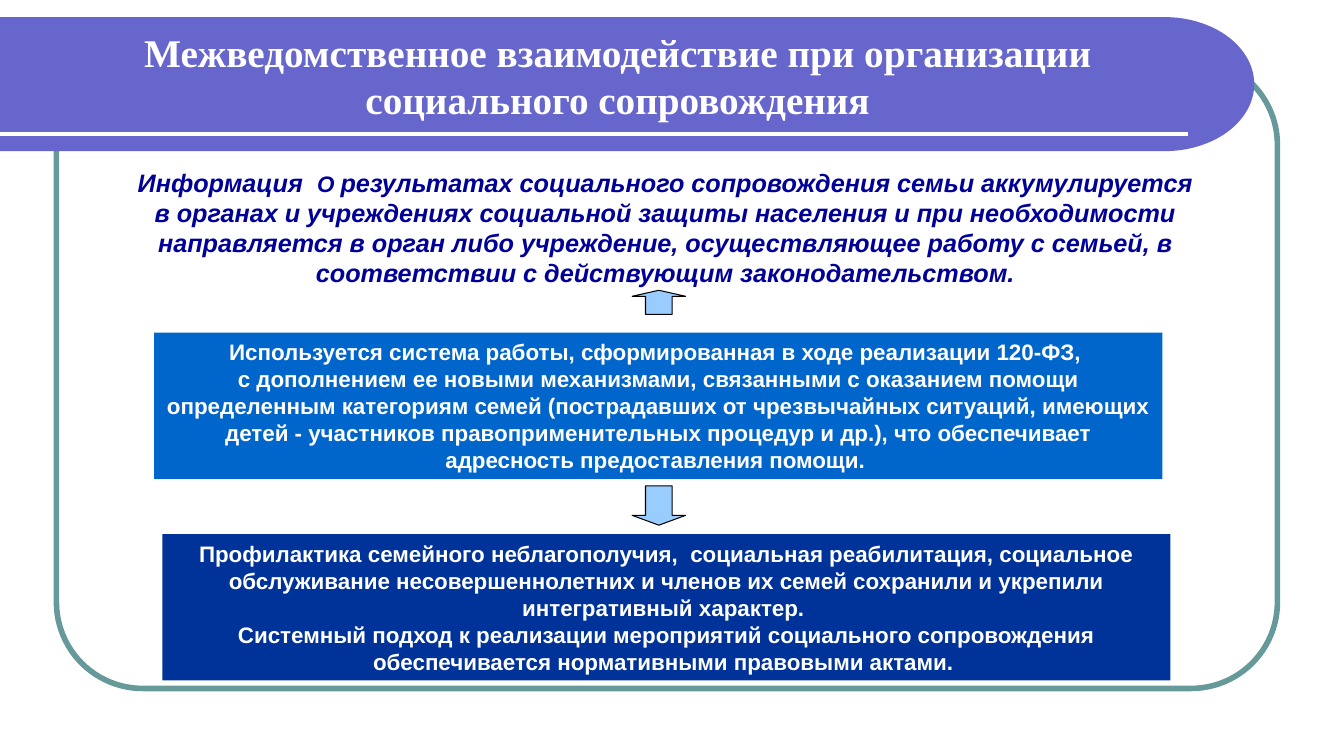
import math

from lxml import etree
from pptx import Presentation
from pptx import util as u
from pptx.dml.color import RGBColor
from pptx.enum import shapes, text

WIDTH, HEIGHT = 13.33, 7.5
BODY = {"name": "Arial", "size": u.Pt(16), "bold": True}
TITLE = {"name": "Times New Roman", "size": u.Pt(28), "bold": True}
LEAD = {**BODY, "size": u.Pt(18), "italic": True}
LEAD_SMALL = {**LEAD, "size": u.Pt(16)}


def inches(*lengths):
    """Turn lengths in inches into slide units."""
    return [u.Inches(length) for length in lengths]


def paint(target, color):
    """Give a fill or a font colour a solid hex colour."""
    if hasattr(target, "solid"):
        target.solid()
        target = target.fore_color
    target.rgb = RGBColor.from_string(color)


def outline(shape, color=None, width=0):
    """Draw the outline of a shape, or remove it when no colour is given."""
    if color is None:
        shape.line.fill.background()
        return
    paint(shape.line.fill, color)
    shape.line.width = u.Pt(width)


def add_preset(page, kind, box, fill=None, line=None, width=0, adjust=()):
    """Place a flat preset shape in the box."""
    shape = page.shapes.add_shape(kind, *inches(*box))
    shape.shadow.inherit = False
    for index, value in enumerate(adjust):
        shape.adjustments[index] = value
    if fill:
        paint(shape.fill, fill)
    else:
        shape.fill.background()
    outline(shape, line, width)
    return shape


def write(shape, paragraphs, color):
    """Write centred paragraphs, each a list of text and format pairs."""
    frame = shape.text_frame
    frame.word_wrap = True
    frame.vertical_anchor = text.MSO_ANCHOR.MIDDLE
    for index, spans in enumerate(paragraphs):
        para = frame.add_paragraph() if index else frame.paragraphs[0]
        para.alignment = text.PP_ALIGN.CENTER
        for words, style in spans:
            span = para.add_run()
            span.text = words
            paint(span.font.color, color)
            for name, value in style.items():
                setattr(span.font, name, value)


def add_text(page, box, paragraphs, color):
    """Place a text box with centred text."""
    write(page.shapes.add_textbox(*inches(*box)), paragraphs, color)


def add_header(page, box, title):
    """Draw the banner with a rounded right end, its rule and the title."""
    left, top, width, height = box
    radius_x, radius_y = width / 14, height / 2
    center_x, center_y = left + width - radius_x, top + radius_y
    angles = [math.radians(degree) for degree in range(-90, 91, 3)]
    curve = [(center_x + radius_x * math.cos(angle),
              center_y + radius_y * math.sin(angle)) for angle in angles]
    builder = page.shapes.build_freeform(*inches(left, top), scale=1.0)
    builder.add_line_segments(
        [inches(*point) for point in curve + [(left, top + height)]], close=True)
    banner = builder.convert_to_shape()
    banner.shadow.inherit = False
    paint(banner.fill, "6666CC")
    outline(banner)

    rule_y = top + height * 0.87
    rule = page.shapes.add_connector(
        shapes.MSO_CONNECTOR.STRAIGHT, *inches(left, rule_y, left + 11.78, rule_y))
    outline(rule, "FFFFFF", 3)
    properties = rule.element.spPr
    etree.SubElement(
        properties, "{http://schemas.openxmlformats.org/drawingml/2006/main}effectLst")
    add_text(page, (left + 0.28, top + 0.08, 11.69, 1), [[(title, TITLE)]], "FFFFFF")


def add_panel(page, box, fill, sentences):
    """Draw a filled rectangle with white bold sentences."""
    panel = add_preset(page, shapes.MSO_SHAPE.RECTANGLE, box, fill)
    write(panel, [[(sentence, BODY)] for sentence in sentences], "FFFFFF")


def add_arrow(page, kind, top, height):
    """Draw a pale block arrow on the common axis."""
    add_preset(page, kind, (6.27, top, 0.53, height), "99CCFF", "000000", 0.75, (0.5, 0.25))


def build_slide(page):
    """Put the frame, banner, lead text, panels and arrows on the page."""
    add_preset(page, shapes.MSO_SHAPE.ROUNDED_RECTANGLE, (0.56, 0.58, 12.11, 6.25),
               line="669999", width=4, adjust=(0.137,))
    add_header(page, (0, 0.17, 12.44, 1.33),
               "Межведомственное взаимодействие при организации социального сопровождения")
    add_text(page, (1.23, 1.6, 10.74, 1.31), [[
        ("Информация  ", LEAD),
        ("О ", LEAD_SMALL),
        ("результатах социального сопровождения семьи аккумулируется в органах и "
         "учреждениях социальной защиты населения и при необходимости направляется "
         "в орган либо учреждение, осуществляющее работу с семьей, в соответствии "
         "с действующим законодательством.", LEAD),
    ]], "000099")
    add_panel(page, (1.53, 3.3, 10, 1.45), "0066CC", [
        "Используется система работы, сформированная в ходе реализации 120-ФЗ, ",
        "с дополнением ее новыми механизмами, связанными с оказанием помощи "
        "определенным категориям семей (пострадавших от чрезвычайных ситуаций, "
        "имеющих детей - участников правоприменительных процедур и др.), "
        "что обеспечивает адресность предоставления помощи. ",
    ])
    add_arrow(page, shapes.MSO_SHAPE.UP_ARROW, 2.88, 0.24)
    add_arrow(page, shapes.MSO_SHAPE.DOWN_ARROW, 4.82, 0.39)
    add_panel(page, (1.61, 5.3, 10, 1.45), "003399", [
        "Профилактика семейного неблагополучия,  социальная реабилитация, "
        "социальное обслуживание несовершеннолетних и членов их семей "
        "сохранили и укрепили интегративный характер. ",
        "Системный подход к реализации мероприятий социального сопровождения "
        "обеспечивается нормативными правовыми актами. ",
    ])


def main():
    """Build the deck and save it."""
    deck = Presentation()
    deck.slide_width, deck.slide_height = inches(WIDTH, HEIGHT)
    build_slide(deck.slides.add_slide(deck.slide_layouts[6]))
    deck.save("out.pptx")


if __name__ == "__main__":
    main()
